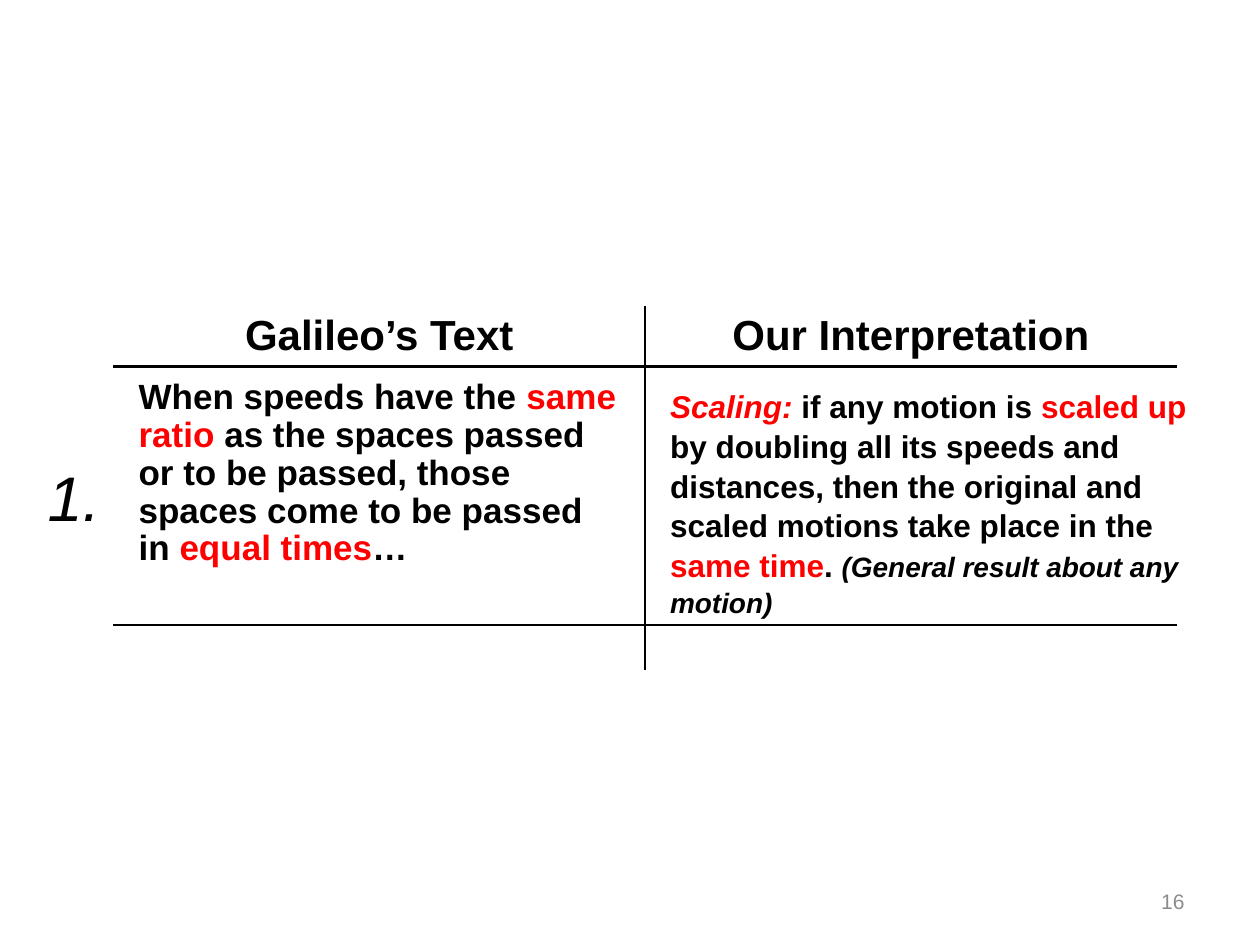
from dataclasses import dataclass, field

from lxml.etree import SubElement
from pptx import Presentation
from pptx.dml.color import RGBColor
from pptx.enum.text import MSO_ANCHOR as Anchor, PP_ALIGN as Align
from pptx.oxml.ns import qn
from pptx.util import Inches, Pt

BLACK, RED, GREY = "000000", "FF0000", "8C8C8C"


@dataclass
class Run:
    text: str
    color: str = BLACK
    form: dict = field(default_factory=dict)


@dataclass
class Label:
    box: tuple
    runs: list
    base: dict
    frame: dict = field(default_factory=dict)
    para: dict = field(default_factory=dict)


def paint(font, color: str) -> None:
    font.color.rgb = RGBColor.from_string(color)


def apply(obj, form: dict) -> None:
    for key, val in form.items():
        setattr(obj, key, val)


def write(frame, runs: list, base: dict, para: dict) -> None:
    """Fill the first paragraph with styled runs."""
    line = frame.paragraphs[0]
    apply(line, para)
    for item in runs:
        run = line.add_run()
        run.text = item.text
        apply(run.font, {"name": "Arial", **base, **item.form})
        paint(run.font, item.color)


def draw_label(slide, label: Label) -> None:
    frame = slide.shapes.add_textbox(*map(Inches, label.box)).text_frame
    apply(frame, {"word_wrap": True, **label.frame})
    write(frame, label.runs, label.base, label.para)


def rule(cell, widths: dict) -> None:
    """Draw black borders on the given sides and clear the others."""
    cell.fill.background()
    props = cell._tc.get_or_add_tcPr()
    for spot, side in enumerate("LRTB"):
        line = SubElement(props, qn(f"a:ln{side}"))
        props.insert(spot, line)
        if side in widths:
            line.set("w", str(Pt(widths[side])))
            fill = SubElement(line, qn("a:solidFill"))
            SubElement(fill, qn("a:srgbClr"), val=BLACK)
        else:
            SubElement(line, qn("a:noFill"))


def draw_table(slide, heads: list, quote: list) -> None:
    rows = [0.48, 2.05, 0.36]
    table = slide.shapes.add_table(
        len(rows), len(heads), Inches(0.9), Inches(2.43), Inches(8.44), Inches(sum(rows))
    ).table
    apply(table, {"first_row": False, "horz_banding": False})
    for col in table.columns:
        col.width = Inches(4.22)
    below = [2, 1]
    for row, high in enumerate(rows):
        table.rows[row].height = Inches(high)
        for col in range(len(heads)):
            sides = {"L" if col else "R": 1}
            if row:
                sides["T"] = below[row - 1]
            if row < len(below):
                sides["B"] = below[row]
            rule(table.cell(row, col), sides)
    for col, head in enumerate(heads):
        write(table.cell(0, col).text_frame, [Run(head)],
              {"size": Pt(24), "bold": True}, {"alignment": Align.CENTER})
        apply(table.cell(2, col), {"margin_top": 0, "margin_bottom": 0})
    body = table.cell(1, 0)
    apply(body, {"margin_left": Inches(0.2), "margin_right": Inches(0.2),
                 "margin_top": Inches(0.1), "margin_bottom": Inches(0.1)})
    write(body.text_frame, quote, {"size": Pt(20), "bold": True}, {"line_spacing": 0.97})


HEADS = ["Galileo’s Text", "Our Interpretation"]
QUOTE = [
    Run("When speeds have the "),
    Run("same ratio ", RED),
    Run("as the spaces passed or to be passed, those spaces come to be passed in "),
    Run("equal times", RED),
    Run("…"),
]
SCALING = [
    Run("Scaling: ", RED, {"italic": True}),
    Run("if any motion is "),
    Run("scaled up", RED),
    Run(" by doubling all its speeds and distances, then the original and "
        "scaled motions take place in the "),
    Run("same time", RED),
    Run(". "),
    Run("(General result about any motion)", form={"size": Pt(16), "italic": True}),
]
LABELS = [
    Label((0.28, 3.59, 0.75, 0.71), [Run("1.")], {"size": Pt(36), "italic": True},
          {"word_wrap": False}),
    Label((5.22, 3.01, 4.42, 1.88), SCALING, {"size": Pt(18), "bold": True},
          para={"line_spacing": 1.05}),
    Label((7.17, 6.95, 2.33, 0.4), [Run("16", GREY)], {"size": Pt(12)},
          {"vertical_anchor": Anchor.MIDDLE}, {"alignment": Align.RIGHT}),
]


def main() -> None:
    deck = Presentation()
    apply(deck, {"slide_width": Inches(10), "slide_height": Inches(7.5)})
    slide = deck.slides.add_slide(deck.slide_layouts[6])
    draw_table(slide, HEADS, QUOTE)
    for label in LABELS:
        draw_label(slide, label)
    deck.save("out.pptx")


if __name__ == "__main__":
    main()
